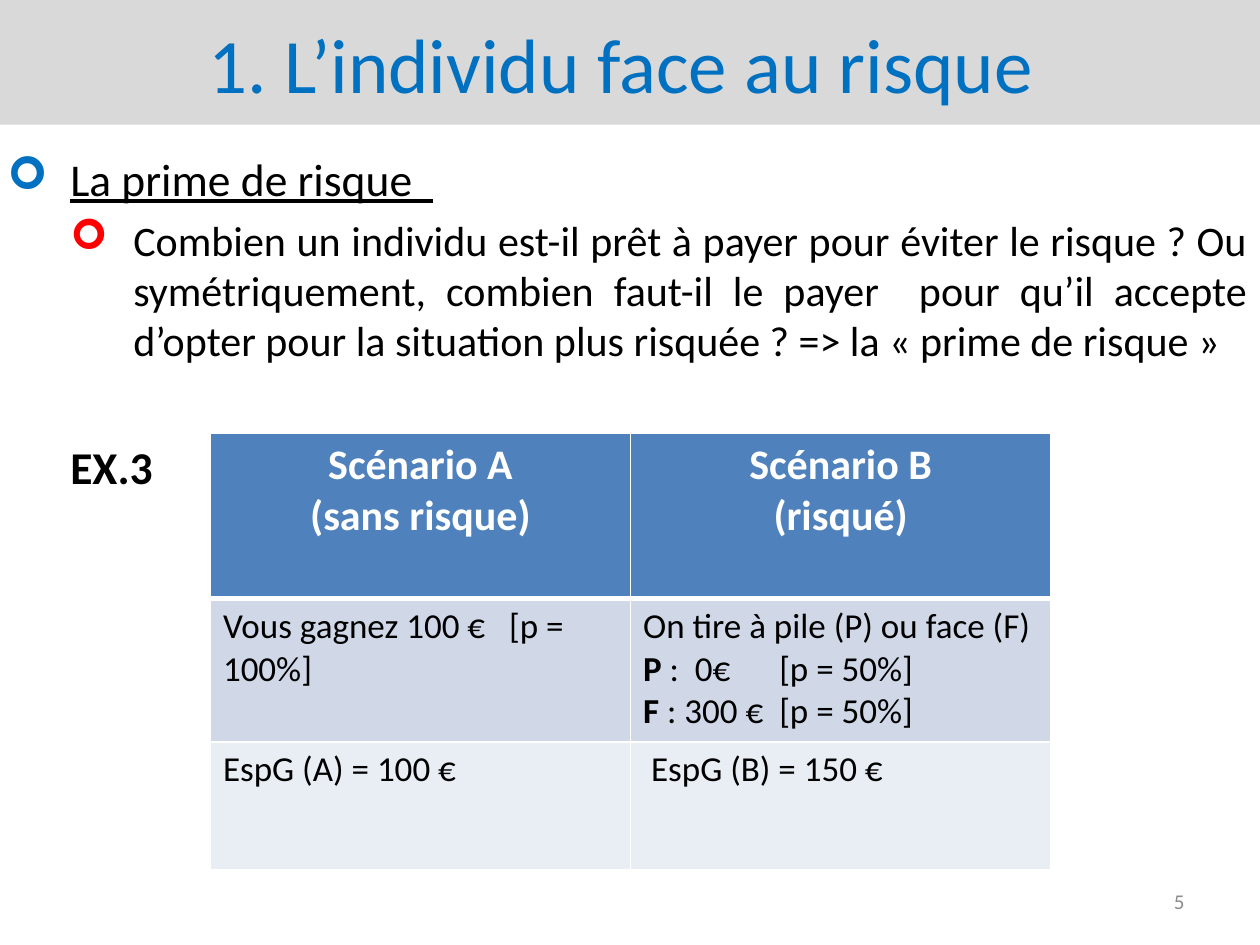
from dataclasses import dataclass

from lxml import etree
from pptx import Presentation
from pptx.dml.color import RGBColor
from pptx.enum.shapes import MSO_SHAPE
from pptx.enum.text import MSO_ANCHOR, PP_ALIGN
from pptx.oxml.ns import qn
from pptx.util import Inches, Pt

LEFT, CENTER = PP_ALIGN.LEFT, PP_ALIGN.CENTER
RIGHT, JUSTIFY = PP_ALIGN.RIGHT, PP_ALIGN.JUSTIFY
MIDDLE, RECTANGLE = MSO_ANCHOR.MIDDLE, MSO_SHAPE.RECTANGLE
FONT = "Calibri"
BLACK, WHITE, BLUE, RED = "000000", "FFFFFF", "0070C0", "FF0000"


@dataclass
class Line:
    """One paragraph; lead is a bold opening, tab a tab stop in inches."""
    text: str
    lead: str = ""
    tab: float = 0


@dataclass
class TableRow:
    height: float
    fill: str
    cells: list[list[Line]]
    size: int = 20
    color: str = BLACK
    bold: bool = False
    align: PP_ALIGN = LEFT
    bottom_width: float = 1


HEADER_HEIGHT, GAIN_HEIGHT, EXPECTED_HEIGHT = 1.31, 1.14, 1.01
ROWS = [
    TableRow(HEADER_HEIGHT, "4F81BD",
             [[Line("Scénario A"), Line("(sans risque)")],
              [Line("Scénario B"), Line("(risqué)")]],
             size=24, color=WHITE, bold=True, align=CENTER, bottom_width=3),
    TableRow(GAIN_HEIGHT, "D0D8E8",
             [[Line("Vous gagnez 100 €\t[p = 100%]", tab=2.27)],
              [Line("On tire à pile (P) ou face (F)"),
               Line(" :  0€\t[p = 50%]", lead="P", tab=1.08),
               Line(" : 300 €\t[p = 50%]", lead="F", tab=1.08)]]),
    TableRow(EXPECTED_HEIGHT, "E9EDF4",
             [[Line("EspG (A) = 100 €")], [Line(" EspG (B) = 150 €")]]),
]


def rgb(color: str) -> RGBColor:
    return RGBColor.from_string(color)


def add_span(para, text: str, *, size: float, color: str = BLACK,
             bold: bool = False, underline: bool = False) -> None:
    span = para.add_run()
    span.text = text
    font = span.font
    font.name, font.size = FONT, Pt(size)
    font.bold, font.underline = bold, underline
    font.color.rgb = rgb(color)


def next_para(frame, first: bool):
    return frame.paragraphs[0] if first else frame.add_paragraph()


def set_indent(para, margin: float, bullet_color: str = "") -> None:
    """Indent a paragraph; a bullet colour adds a hanging arrow bullet."""
    props = para._p.get_or_add_pPr()
    props.set("marL", str(Inches(margin)))
    props.set("indent", str(Inches(-0.5 if bullet_color else 0)))
    if bullet_color:
        color = etree.SubElement(props, qn("a:buClr"))
        etree.SubElement(color, qn("a:srgbClr"), val=bullet_color)
        etree.SubElement(props, qn("a:buFont"), typeface="Wingdings")
        etree.SubElement(props, qn("a:buChar"), char="➢")


def set_tab(para, position: float) -> None:
    tabs = etree.SubElement(para._p.get_or_add_pPr(), qn("a:tabLst"))
    etree.SubElement(tabs, qn("a:tab"), pos=str(Inches(position)), algn="l")


def set_borders(cell, bottom_width: float, top_width: float) -> None:
    props = cell._tc.get_or_add_tcPr()
    widths = {"a:lnL": 1, "a:lnR": 1, "a:lnT": top_width, "a:lnB": bottom_width}
    for index, (tag, width) in enumerate(widths.items()):
        line = etree.Element(qn(tag), w=str(Pt(width)))
        fill = etree.SubElement(line, qn("a:solidFill"))
        etree.SubElement(fill, qn("a:srgbClr"), val=WHITE)
        props.insert(index, line)


def add_title(page) -> None:
    box = page.shapes.add_shape(RECTANGLE, 0, 0, Inches(10), Inches(0.99))
    box.shadow.inherit = False
    box.fill.solid()
    box.fill.fore_color.rgb = rgb("D9D9D9")
    box.line.fill.background()
    box.text_frame.vertical_anchor = MIDDLE
    para = box.text_frame.paragraphs[0]
    para.alignment = CENTER
    add_span(para, "1. L’individu face au risque ", size=44, color=BLUE)


def add_body(page) -> None:
    box = page.shapes.add_textbox(Inches(-0.04), Inches(1.15),
                                  Inches(10.04), Inches(6.35))
    frame = box.text_frame
    frame.word_wrap = True
    question = ("Combien un individu est-il prêt à payer pour éviter le risque ? "
                "Ou symétriquement, combien faut-il le payer  pour qu’il accepte "
                "d’opter pour la situation plus risquée ? => "
                "la « prime de risque »")
    items = [
        ("La prime de risque  ", 0.5, BLUE, 0, {"size": 26, "underline": True}),
        (question, 1, RED, 4.8, {"size": 24}),
        ("EX.3", 0.5, "", 42, {"size": 26, "bold": True}),
    ]
    for index, (text, margin, bullet_color, before, style) in enumerate(items):
        para = next_para(frame, index == 0)
        para.alignment = JUSTIFY
        para.space_before = Pt(before)
        set_indent(para, margin, bullet_color)
        add_span(para, text, **style)


def fill_cell(cell, row: TableRow, lines: list[Line], top_width: float) -> None:
    cell.fill.solid()
    cell.fill.fore_color.rgb = rgb(row.fill)
    set_borders(cell, row.bottom_width, top_width)
    for index, line in enumerate(lines):
        para = next_para(cell.text_frame, index == 0)
        para.alignment = row.align
        if line.tab:
            set_tab(para, line.tab)
        if line.lead:
            add_span(para, line.lead, size=row.size, color=row.color, bold=True)
        add_span(para, line.text, size=row.size, color=row.color, bold=row.bold)


def add_scenarios(page) -> None:
    height = sum(row.height for row in ROWS)
    table = page.shapes.add_table(len(ROWS), 2, Inches(1.67), Inches(3.44),
                                  Inches(6.67), Inches(height)).table
    table.horz_banding = False
    top_width = 1
    for row_index, row in enumerate(ROWS):
        table.rows[row_index].height = Inches(row.height)
        for column, lines in enumerate(row.cells):
            fill_cell(table.cell(row_index, column), row, lines, top_width)
        top_width = row.bottom_width


def add_page_number(page) -> None:
    box = page.shapes.add_textbox(Inches(7.17), Inches(6.95),
                                  Inches(2.33), Inches(0.4))
    frame = box.text_frame
    frame.word_wrap = True
    frame.vertical_anchor = MIDDLE
    frame.paragraphs[0].alignment = RIGHT
    add_span(frame.paragraphs[0], "5", size=12, color="8C8C8C")


def main() -> None:
    deck = Presentation()
    deck.slide_width, deck.slide_height = Inches(10), Inches(7.5)
    page = deck.slides.add_slide(deck.slide_layouts[6])
    add_title(page)
    add_body(page)
    add_page_number(page)
    add_scenarios(page)
    deck.save("out.pptx")


if __name__ == "__main__":
    main()
